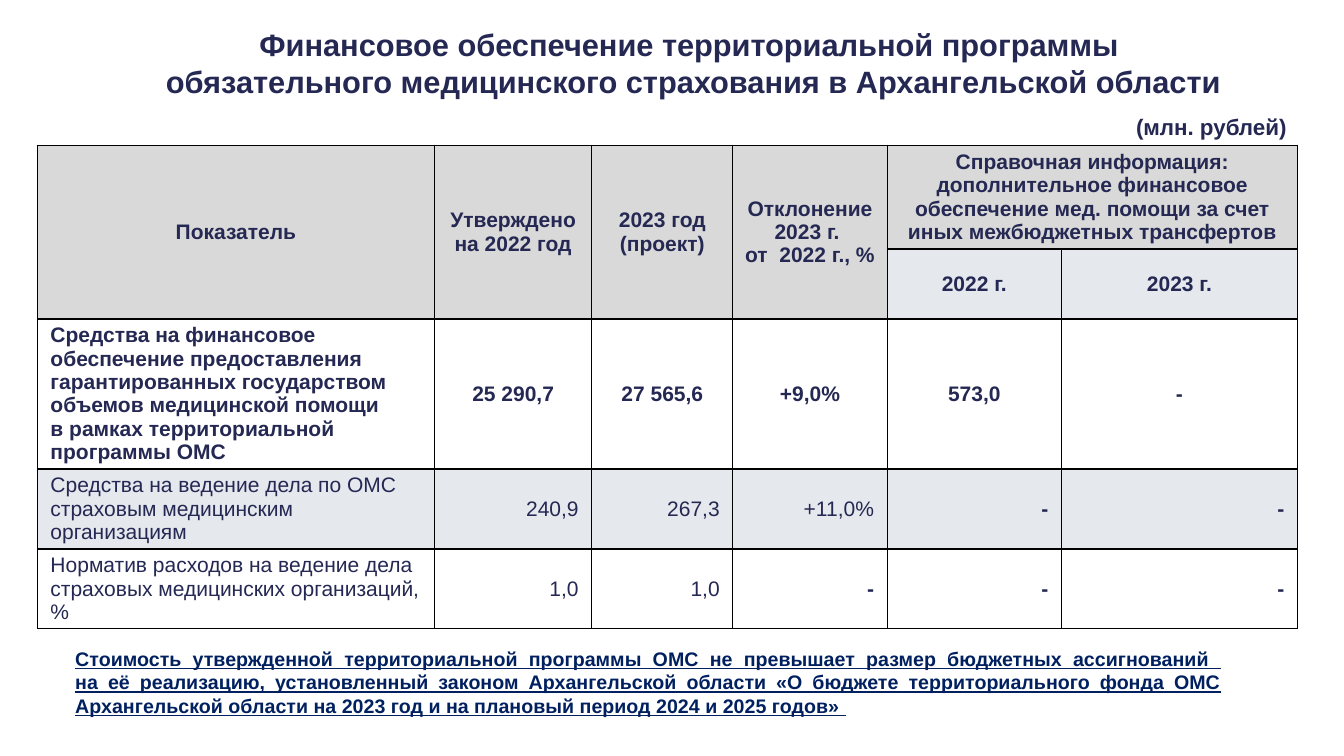
"""Builds a slide on the funding of a regional health insurance programme."""
from dataclasses import dataclass

import lxml.etree
import pptx
import pptx.dml.color
import pptx.enum.shapes
import pptx.enum.text
import pptx.oxml.ns
import pptx.util

ALIGN = pptx.enum.text.PP_ALIGN
ANCHOR = pptx.enum.text.MSO_ANCHOR
WIDTH = pptx.util.Inches(13.33)
HEIGHT = pptx.util.Inches(7.5)
INK, NAVY, GREY, SLATE, BLACK = "242852", "002060", "D9D9D9", "7F8FA9", "000000"
COLUMN_SHARES = (29.55, 11.7, 10.5, 11.48, 12.98, 17.55)
ROW_SHARES = (13.73, 9.27, 19.84, 10.58, 10.58)
TABLE_LEFT, TABLE_TOP = 2.78, 19.2


@dataclass(frozen=True)
class Style:
    size: float
    color: str = INK
    bold: bool = True
    underline: bool = False
    align: ALIGN = ALIGN.CENTER


@dataclass(frozen=True)
class Caption:
    text: str
    left: float
    top: float
    width: float
    height: float
    style: Style
    anchor: ANCHOR = ANCHOR.TOP
    shape_type: pptx.enum.shapes.MSO_SHAPE | None = None


@dataclass(frozen=True)
class HeaderCell:
    text: str
    row: int
    column: int
    rows: int = 1
    columns: int = 1
    tight: bool = False


CAPTIONS = (
    Caption("Финансовое обеспечение территориальной программы \v"
            "обязательного медицинского страхования в Архангельской области",
            6.6, 2.8, 90, 9.47, Style(22)),
    Caption("(млн. рублей)", 77.57, 14.27, 18.9, 4.93, Style(16, align=ALIGN.RIGHT)),
    Caption("Стоимость утвержденной территориальной программы ОМС не превышает "
            "размер бюджетных ассигнований \vна её реализацию, установленный законом "
            "Архангельской области «О бюджете территориального фонда ОМС Архангельской "
            "области на 2023 год и на плановый период 2024 и 2025 годов» ",
            4.5, 83.6, 87.47, 13.2, Style(14, NAVY, underline=True, align=ALIGN.JUSTIFY),
            ANCHOR.MIDDLE, pptx.enum.shapes.MSO_SHAPE.ROUNDED_RECTANGLE),
)
HEADERS = (
    HeaderCell("Показатель", 0, 0, rows=2),
    HeaderCell("Утверждено на 2022 год", 0, 1, rows=2),
    HeaderCell("2023 год (проект)", 0, 2, rows=2, tight=True),
    HeaderCell("Отклонение 2023 г. \vот  2022 г., %", 0, 3, rows=2, tight=True),
    HeaderCell("Справочная информация: дополнительное финансовое обеспечение "
               "мед. помощи за счет иных межбюджетных трансфертов",
               0, 4, columns=2, tight=True),
    HeaderCell("2022 г.", 1, 4),
    HeaderCell("2023 г.", 1, 5),
)
BODY = (
    ("Средства на финансовое обеспечение предоставления гарантированных государством "
     "объемов медицинской помощи \vв рамках территориальной программы ОМС",
     "25 290,7", "27 565,6", "+9,0%", "573,0", "-"),
    ("Средства на ведение дела по ОМС страховым медицинским организациям",
     "240,9", "267,3", "+11,0%", "-", "-"),
    ("Норматив расходов на ведение дела страховых медицинских организаций, %",
     "1,0", "1,0", "-", "-", "-"),
)


def across(share: float) -> int:
    """Turn a percentage of the slide width into a length."""
    return round(WIDTH * share / 100)


def down(share: float) -> int:
    """Turn a percentage of the slide height into a length."""
    return round(HEIGHT * share / 100)


def rgb(value: str) -> pptx.dml.color.RGBColor:
    """Turn a hex string into a colour."""
    return pptx.dml.color.RGBColor.from_string(value)


def write(text_frame, text: str, style: Style) -> None:
    """Fill a text frame and format its runs."""
    text_frame.text = text
    for paragraph in text_frame.paragraphs:
        paragraph.alignment = style.align
        for run in paragraph.runs:
            run.font.name = "Arial"
            run.font.size = pptx.util.Pt(style.size)
            run.font.bold = style.bold
            run.font.underline = style.underline
            run.font.color.rgb = rgb(style.color)


def add_caption(slide, caption: Caption) -> None:
    """Place one caption outside the table."""
    box = (across(caption.left), down(caption.top),
           across(caption.width), down(caption.height))
    if caption.shape_type is None:
        shape = slide.shapes.add_textbox(*box)
    else:
        shape = slide.shapes.add_shape(caption.shape_type, *box)
        shape.shadow.inherit = False
        shape.fill.background()
        shape.line.fill.background()
    shape.text_frame.word_wrap = True
    shape.text_frame.vertical_anchor = caption.anchor
    write(shape.text_frame, caption.text, caption.style)


def paint_cell(cell, fill: str | None) -> None:
    """Give a cell its borders and its fill, with slate drawn translucent."""
    properties = cell._tc.get_or_add_tcPr()
    qualified = pptx.oxml.ns.qn
    for side in ("lnL", "lnR", "lnT", "lnB"):
        line = lxml.etree.SubElement(properties, qualified(f"a:{side}"),
                                     w=str(pptx.util.Pt(1)))
        solid = lxml.etree.SubElement(line, qualified("a:solidFill"))
        lxml.etree.SubElement(solid, qualified("a:srgbClr"), val=BLACK)
    if fill is None:
        cell.fill.background()
        return
    cell.fill.solid()
    cell.fill.fore_color.rgb = rgb(fill)
    if fill == SLATE:
        color = properties.find(f"{qualified('a:solidFill')}/{qualified('a:srgbClr')}")
        lxml.etree.SubElement(color, qualified("a:alpha"), val="20000")


def fill_for(row: int, column: int) -> str | None:
    """Choose the fill of a table cell."""
    if row == 0 or (row == 1 and column < 4):
        return GREY
    return SLATE if row in (1, 3) else None


def body_style(row: int, column: int, text: str) -> Style:
    """Choose the text style of a body cell."""
    if column == 0:
        align = ALIGN.LEFT
    else:
        align = ALIGN.CENTER if row == 0 else ALIGN.RIGHT
    return Style(15, bold=row == 0 or text == "-", align=align)


def add_table(slide) -> None:
    """Draw the funding table."""
    table = slide.shapes.add_table(
        len(ROW_SHARES), len(COLUMN_SHARES), across(TABLE_LEFT), down(TABLE_TOP),
        across(sum(COLUMN_SHARES)), down(sum(ROW_SHARES))).table
    table.first_row = table.horz_banding = False
    for column, share in zip(table.columns, COLUMN_SHARES):
        column.width = across(share)
    for row_index, (row, share) in enumerate(zip(table.rows, ROW_SHARES)):
        row.height = down(share)
        for column_index, cell in enumerate(row.cells):
            paint_cell(cell, fill_for(row_index, column_index))
            cell.vertical_anchor = ANCHOR.MIDDLE
            cell.margin_left = cell.margin_right = across(0.98)
            cell.margin_top = cell.margin_bottom = down(0.6)
    for header in HEADERS:
        cell = table.cell(header.row, header.column)
        if header.rows * header.columns > 1:
            cell.merge(table.cell(header.row + header.rows - 1,
                                  header.column + header.columns - 1))
        if header.tight:
            cell.margin_left = cell.margin_right = across(0.75)
            cell.margin_top = cell.margin_bottom = 0
        write(cell.text_frame, header.text, Style(15))
    for row_index, texts in enumerate(BODY):
        for column_index, text in enumerate(texts):
            write(table.cell(row_index + 2, column_index).text_frame, text,
                  body_style(row_index, column_index, text))


def main() -> None:
    """Build and save the presentation."""
    presentation = pptx.Presentation()
    presentation.slide_width, presentation.slide_height = WIDTH, HEIGHT
    slide = presentation.slides.add_slide(presentation.slide_layouts[6])
    add_table(slide)
    for caption in CAPTIONS:
        add_caption(slide, caption)
    presentation.save("out.pptx")


if __name__ == "__main__":
    main()
